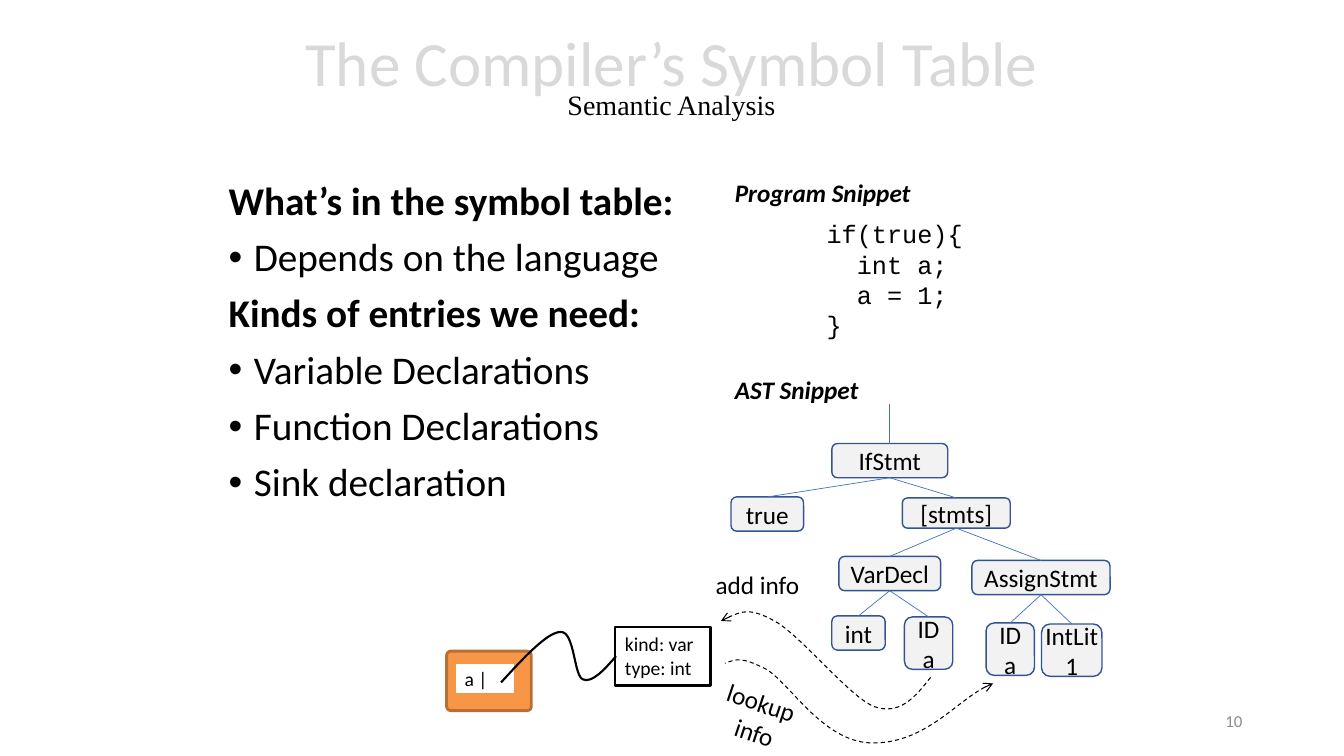
from lxml import etree
from pptx import Presentation
from pptx import util as u
from pptx.dml import color
from pptx.enum import dml, shapes, text
from pptx.oxml import ns

COLORS = {
    "black": "000000", "white": "FFFFFF", "title": "D9D9D9", "number": "8C8C8C",
    "node": "F2F2F2", "node_line": "325491", "edge": "4472C4",
    "table": "F79646", "table_line": "B76F34",
}
LEFT, CENTER, RIGHT = text.PP_ALIGN.LEFT, text.PP_ALIGN.CENTER, text.PP_ALIGN.RIGHT
TOP, MIDDLE = text.MSO_ANCHOR.TOP, text.MSO_ANCHOR.MIDDLE
ROUNDED = shapes.MSO_SHAPE.ROUNDED_RECTANGLE
RECTANGLE = shapes.MSO_SHAPE.RECTANGLE

BODY = [
    ("What’s in the symbol table:", True),
    ("Depends on the language", False),
    ("Kinds of entries we need:", True),
    ("Variable Declarations", False),
    ("Function Declarations", False),
    ("Sink declaration", False),
]
NODES = {
    "if": ("IfStmt", 8.25, 4.4, 1.15, 0.34),
    "true": ("true", 7.25, 4.93, 0.72, 0.34),
    "stmts": ("[stmts]", 8.95, 4.94, 1.07, 0.3),
    "decl": ("VarDecl", 8.32, 5.52, 1.01, 0.34),
    "int": ("int", 8.25, 6.11, 0.53, 0.34),
    "decl_id": ("ID\na", 8.97, 6.12, 0.48, 0.52),
    "assign": ("AssignStmt", 9.64, 5.56, 1.37, 0.34),
    "assign_id": ("ID\na", 9.78, 6.18, 0.48, 0.52),
    "literal": ("IntLit\n1", 10.33, 6.19, 0.6, 0.52),
}
CHILDREN = {
    "if": ["true", "stmts"],
    "stmts": ["decl", "assign"],
    "decl": ["int", "decl_id"],
    "assign": ["assign_id", "literal"],
}
ADD_CURVE = [(9.23, 6.72), (9.08, 6.91), (8.93, 7.1), (8.67, 7.01), (8.42, 6.91),
             (7.94, 6.3), (7.68, 6.16), (7.43, 6.02), (7.29, 6.09), (7.15, 6.16)]
LOOKUP_CURVE = [(9.85, 6.78), (9.53, 6.9), (9.18, 7.36), (8.68, 7.37), (8.18, 7.39),
                (7.84, 6.78), (7.6, 6.64), (7.35, 6.51), (7.3, 6.54), (7.19, 6.58)]
ENTRY_CURVE = [(4.97, 6.77), (5.2, 6.52), (5.43, 6.27), (5.56, 6.27), (5.7, 6.26),
               (5.69, 6.7), (5.78, 6.74), (5.87, 6.78), (5.99, 6.65), (6.11, 6.51)]


def rgb(name):
    return color.RGBColor.from_string(COLORS[name])


def style_span(span, size, hue="black", face="Calibri", bold=False, italic=False):
    font = span.font
    font.size, font.name, font.bold, font.italic = u.Pt(size), face, bold, italic
    font.color.rgb = rgb(hue)


def write(shape, words, size, align=LEFT, anchor=TOP, wrap=True, **style):
    frame = shape.text_frame
    frame.text = words
    frame.word_wrap = wrap
    frame.vertical_anchor = anchor
    for para in frame.paragraphs:
        para.alignment = align
        for span in para.runs:
            style_span(span, size, **style)


def add_text(page, words, area, size, **style):
    box = page.shapes.add_textbox(*map(u.Inches, area))
    write(box, words, size, **style)
    return box


def add_box(page, kind, area, fill, line, width):
    box = page.shapes.add_shape(kind, *map(u.Inches, area))
    box.shadow.inherit = False
    box.fill.solid()
    box.fill.fore_color.rgb = rgb(fill)
    box.line.color.rgb = rgb(line)
    box.line.width = u.Pt(width)
    return box


def add_node(page, words, *area):
    node = add_box(page, ROUNDED, area, "node", "node_line", 1)
    frame = node.text_frame
    frame.margin_left = frame.margin_right = frame.margin_top = frame.margin_bottom = 0
    write(node, words, 18, align=CENTER, anchor=MIDDLE)
    return node


def add_edge(page, child, parent=None):
    """Join a node to its parent, or hang the root from a vertical line."""
    x, y = child.left + child.width // 2, u.Inches(4.01)
    edge = page.shapes.add_connector(shapes.MSO_CONNECTOR.STRAIGHT, x, y, x, child.top)
    if parent is not None:
        edge.begin_connect(parent, 2)
    edge.end_connect(child, 0)
    edge.line.color.rgb = rgb("edge")
    edge.line.width = u.Pt(0.5)
    etree.SubElement(edge.element.spPr, ns.qn("a:effectLst"))


def bend(curve, controls):
    """Replace the straight segments of a freeform by cubic ones."""
    outline = curve.element.spPr.find(".//" + ns.qn("a:path"))
    for segment in outline.findall(ns.qn("a:lnTo")):
        outline.remove(segment)
    for first in range(1, len(controls), 3):
        cubic = etree.SubElement(outline, ns.qn("a:cubicBezTo"))
        for x, y in controls[first:first + 3]:
            etree.SubElement(cubic, ns.qn("a:pt"), x=str(x - curve.left), y=str(y - curve.top))


def add_curve(page, points, width, arrow_end=None):
    controls = [(u.Inches(x), u.Inches(y)) for x, y in points]
    builder = page.shapes.build_freeform(*controls[0])
    builder.add_line_segments(controls[3::3], close=False)
    curve = builder.convert_to_shape()
    bend(curve, controls)
    curve.shadow.inherit = False
    curve.fill.background()
    curve.line.color.rgb = rgb("black")
    curve.line.width = u.Pt(width)
    if arrow_end:
        curve.line.dash_style = dml.MSO_LINE.DASH
        line = curve.element.spPr.find(ns.qn("a:ln"))
        etree.SubElement(line, ns.qn(arrow_end), type="arrow")


def add_title(page):
    title = add_text(page, "", (2.35, 0.09, 8.62, 1.45), 45, anchor=MIDDLE)
    para = title.text_frame.paragraphs[0]
    para.text = "The Compiler’s Symbol Table\vSemantic Analysis"
    para.alignment = CENTER
    para.line_spacing = 0.7
    heading, subtitle = para.runs
    style_span(heading, 45, "title")
    style_span(subtitle, 20, face="Times New Roman")


def add_body(page):
    words = "\n".join(line for line, _ in BODY)
    body = add_text(page, words, (2.17, 1.75, 4.96, 3.5), 28)
    for para, (_, heading) in zip(body.text_frame.paragraphs, BODY):
        para.line_spacing = 0.9
        para.space_before = u.Pt(10)
        para.runs[0].font.bold = heading
        if not heading:
            props = para._p.get_or_add_pPr()
            props.set("marL", str(u.Inches(0.25)))
            props.set("indent", str(-u.Inches(0.25)))
            etree.SubElement(props, ns.qn("a:buFont"), typeface="Arial")
            etree.SubElement(props, ns.qn("a:buChar"), char="•")


def add_tree(page):
    nodes = {key: add_node(page, *node) for key, node in NODES.items()}
    add_edge(page, nodes["if"])
    for parent, children in CHILDREN.items():
        for child in children:
            add_edge(page, nodes[child], nodes[parent])


def add_symbol_table(page):
    table = add_box(page, ROUNDED, (4.43, 6.46, 0.84, 0.59), "table", "table_line", 2)
    table.adjustments[0] = 0.07
    name = add_box(page, RECTANGLE, (4.51, 6.57, 0.6, 0.32), "white", "table", 2)
    write(name, "a |", 14, anchor=MIDDLE)
    entry = add_box(page, RECTANGLE, (6.1, 6.22, 0.95, 0.58), "white", "black", 2)
    write(entry, "kind: var\ntype: int", 14)
    add_curve(page, ENTRY_CURVE, 1.5)


def main():
    deck = Presentation()
    deck.slide_width, deck.slide_height = u.Inches(13.33), u.Inches(7.5)
    page = deck.slides.add_slide(deck.slide_layouts[6])
    add_title(page)
    add_body(page)
    add_text(page, "10", (9.42, 6.95, 3, 0.4), 12, align=RIGHT, anchor=MIDDLE, hue="number")
    add_text(page, "if(true){\n  int a;\n  a = 1;\n}", (8.1, 2.12, 2.35, 1.31), 18,
             face="Courier New")
    for label, top, width in (("Program Snippet", 1.71, 1.97), ("AST Snippet", 3.66, 1.45)):
        add_text(page, label, (7.19, top, width, 0.4), 18, wrap=False, bold=True, italic=True)
    add_tree(page)
    add_curve(page, ADD_CURVE, 0.75, "a:tailEnd")
    add_text(page, "add info", (7, 5.6, 1.04, 0.4), 18, wrap=False)
    add_curve(page, LOOKUP_CURVE, 0.75, "a:headEnd")
    lookup = add_text(page, "lookup \ninfo", (7.05, 6.77, 0.96, 0.71), 18,
                      align=CENTER, wrap=False)
    lookup.rotation = 18.4
    add_symbol_table(page)
    deck.save("out.pptx")


if __name__ == "__main__":
    main()
